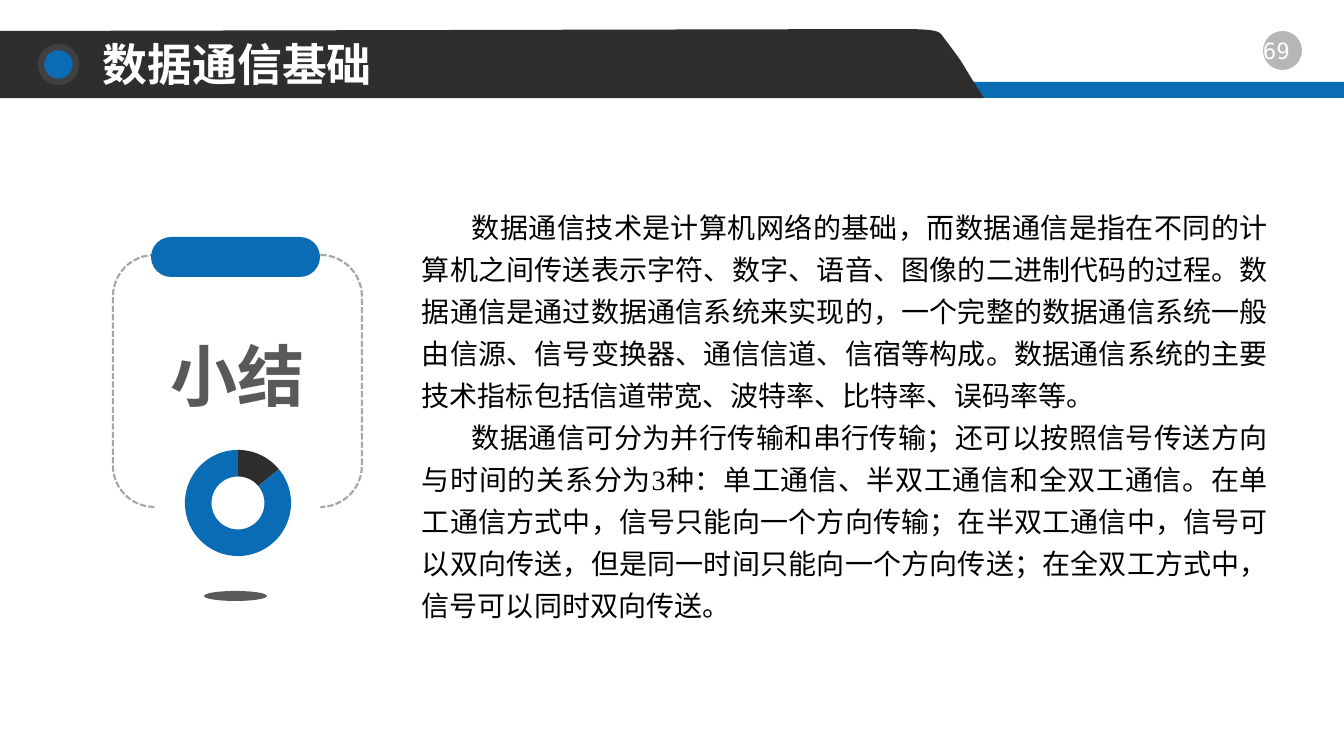
"""Builds the summary slide of a chapter on data communication basics."""
from lxml import etree
from pptx import Presentation
from pptx.chart.data import CategoryChartData
from pptx.dml.color import RGBColor
from pptx.enum.chart import XL_CHART_TYPE
from pptx.enum.dml import MSO_LINE
from pptx.enum.shapes import MSO_SHAPE
from pptx.enum.text import MSO_ANCHOR, PP_ALIGN
from pptx.oxml.ns import qn
from pptx.util import Pt

DOUGHNUT = XL_CHART_TYPE.DOUGHNUT
DASH = MSO_LINE.SQUARE_DOT
RECTANGLE, ELLIPSE = MSO_SHAPE.RECTANGLE, MSO_SHAPE.OVAL
PILL, BRACKETS = MSO_SHAPE.ROUNDED_RECTANGLE, MSO_SHAPE.DOUBLE_BRACKET
TOP, MIDDLE = MSO_ANCHOR.TOP, MSO_ANCHOR.MIDDLE
LEFT, CENTER, JUSTIFY = PP_ALIGN.LEFT, PP_ALIGN.CENTER, PP_ALIGN.JUSTIFY

PX = 914400 / 100.8
SLIDE = (1344, 756)
SERIF, SANS, MONO, CHART_FONT = "Times New Roman", "Noto Sans CJK SC", "DejaVu Sans Mono", "Calibri"
COLORS = {"blue": "0A6CB5", "dark": "2E2E2E", "ring": "404040", "dash": "A6A6A6",
          "grey": "595959", "white": "FFFFFF", "black": "000000"}

TITLE = "数据通信基础"
PAGE_NUMBER = "69"
LABEL = "小结"
SUMMARY = [
    "数据通信技术是计算机网络的基础，而数据通信是指在不同的计算机之间传送表示字符、数字、语音、图像的二进制代码的过程。"
    "数据通信是通过数据通信系统来实现的，一个完整的数据通信系统一般由信源、信号变换器、通信信道、信宿等构成。"
    "数据通信系统的主要技术指标包括信道带宽、波特率、比特率、误码率等。",
    "数据通信可分为并行传输和串行传输；还可以按照信号传送方向与时间的关系分为3种：单工通信、半双工通信和全双工通信。"
    "在单工通信方式中，信号只能向一个方向传输；在半双工通信中，信号可以双向传送，但是同一时间只能向一个方向传送；"
    "在全双工方式中，信号可以同时双向传送。",
]
SHARES = {"1": (14, "dark"), "2": (86, "blue")}
BANNER_CORNER = [(944, 38), (939, 31), (940, 29), (897, 29)]
BANNER_SLOPE = [(984, 98), (955, 53), (969, 71), (944, 38)]


def emu(*lengths):
    return [round(length * PX) for length in lengths]


def rgb(name):
    return RGBColor.from_string(COLORS[name])


def curve(points, steps=12):
    """Points along a cubic curve."""
    weights = (1, 3, 3, 1)
    return [tuple(sum(weight * (1 - t) ** (3 - i) * t ** i * point[axis]
                      for i, (weight, point) in enumerate(zip(weights, points)))
                  for axis in (0, 1))
            for t in (step / steps for step in range(steps + 1))]


def paint(shape, fill=None, alpha=None, line=None, width=1, dash=None):
    shape.shadow.inherit = False
    if fill:
        shape.fill.solid()
        shape.fill.fore_color.rgb = rgb(fill)
    else:
        shape.fill.background()
    if alpha:
        color = shape.fill._xPr.find(".//" + qn("a:srgbClr"))
        etree.SubElement(color, qn("a:alpha")).set("val", str(alpha * 1000))
    if line:
        shape.line.color.rgb = rgb(line)
        shape.line.width = Pt(width)
        shape.line.dash_style = dash
    else:
        shape.line.fill.background()
    return shape


def add_figure(slide, kind, place, **style):
    return paint(slide.shapes.add_shape(kind, *emu(*place)), **style)


def add_text(slide, place, paragraphs, size, color, font=SERIF, bold=False, align=LEFT,
             anchor=TOP, spacing=1.0, indent=0, right=10):
    box = slide.shapes.add_textbox(*emu(*place))
    frame = box.text_frame
    frame.word_wrap = True
    frame.vertical_anchor = anchor
    frame.margin_right = emu(right)[0]
    for number, text in enumerate(paragraphs):
        para = frame.add_paragraph() if number else frame.paragraphs[0]
        para.alignment = align
        para.line_spacing = spacing
        if indent:
            para._p.get_or_add_pPr().set("indent", str(emu(indent)[0]))
        span = para.add_run()
        span.text = text
        span.font.name, span.font.size, span.font.bold = font, Pt(size), bold
        span.font.color.rgb = rgb(color)
        east_asian = etree.SubElement(span.font._element, qn("a:ea"))
        east_asian.set("typeface", SANS)


def add_doughnut(slide, place):
    data = CategoryChartData()
    data.categories = list(SHARES)
    data.add_series("Series 1", [value for value, _ in SHARES.values()])
    chart = slide.shapes.add_chart(DOUGHNUT, *emu(*place), data).chart
    chart.has_legend = chart.has_title = False
    chart.font.name, chart.font.size = CHART_FONT, Pt(10)
    chart.font.color.rgb = rgb("black")
    plot = chart.plots[0]
    plot.vary_by_categories = True
    plot._element.find(qn("c:holeSize")).set("val", "47")
    for number, (_, color) in enumerate(SHARES.values()):
        sector = plot.series[0].points[number].format
        sector.fill.solid()
        sector.fill.fore_color.rgb = rgb(color)
        sector.line.fill.background()


def add_header(slide):
    add_figure(slide, RECTANGLE, (0, 82, 1344, 16), fill="blue")
    outline = curve(BANNER_CORNER) + [(0, 31), (0, 98)] + curve(BANNER_SLOPE)
    corners = [emu(*point) for point in outline]
    builder = slide.shapes.build_freeform(*corners[0])
    builder.add_line_segments(corners[1:], close=True)
    paint(builder.convert_to_shape(), fill="dark")
    add_figure(slide, ELLIPSE, (41, 47, 35, 35), fill="blue", line="ring", width=4.5)
    add_figure(slide, ELLIPSE, (1263, 31, 39, 39), fill="dark", alpha=35)
    add_text(slide, (1247, 32, 72, 37), [PAGE_NUMBER], 16, "white", font=MONO,
             align=CENTER, right=23)
    add_text(slide, (93, 29, 643, 76), [TITLE], 32, "white", bold=True,
             anchor=MIDDLE, spacing=0.9)


def add_badge(slide):
    add_figure(slide, BRACKETS, (113, 255, 249, 252), line="dash", width=1.5, dash=DASH)
    pill = add_figure(slide, PILL, (151, 237, 169, 40), fill="blue")
    pill.adjustments[0] = 0.5
    add_text(slide, (139, 289, 197, 118), [LABEL], 48, "grey", font=SANS, bold=True,
             align=CENTER, spacing=1.5)
    add_doughnut(slide, (137, 436, 202, 134))
    add_figure(slide, ELLIPSE, (204, 591, 63, 10), fill="grey")


def main():
    deck = Presentation()
    deck.slide_width, deck.slide_height = emu(*SLIDE)
    slide = deck.slides.add_slide(deck.slide_layouts[6])
    add_header(slide)
    add_badge(slide)
    add_text(slide, (412, 197, 866, 434), SUMMARY, 20, "black", align=JUSTIFY,
             spacing=1.25, indent=50)
    deck.save("out.pptx")


if __name__ == "__main__":
    main()
